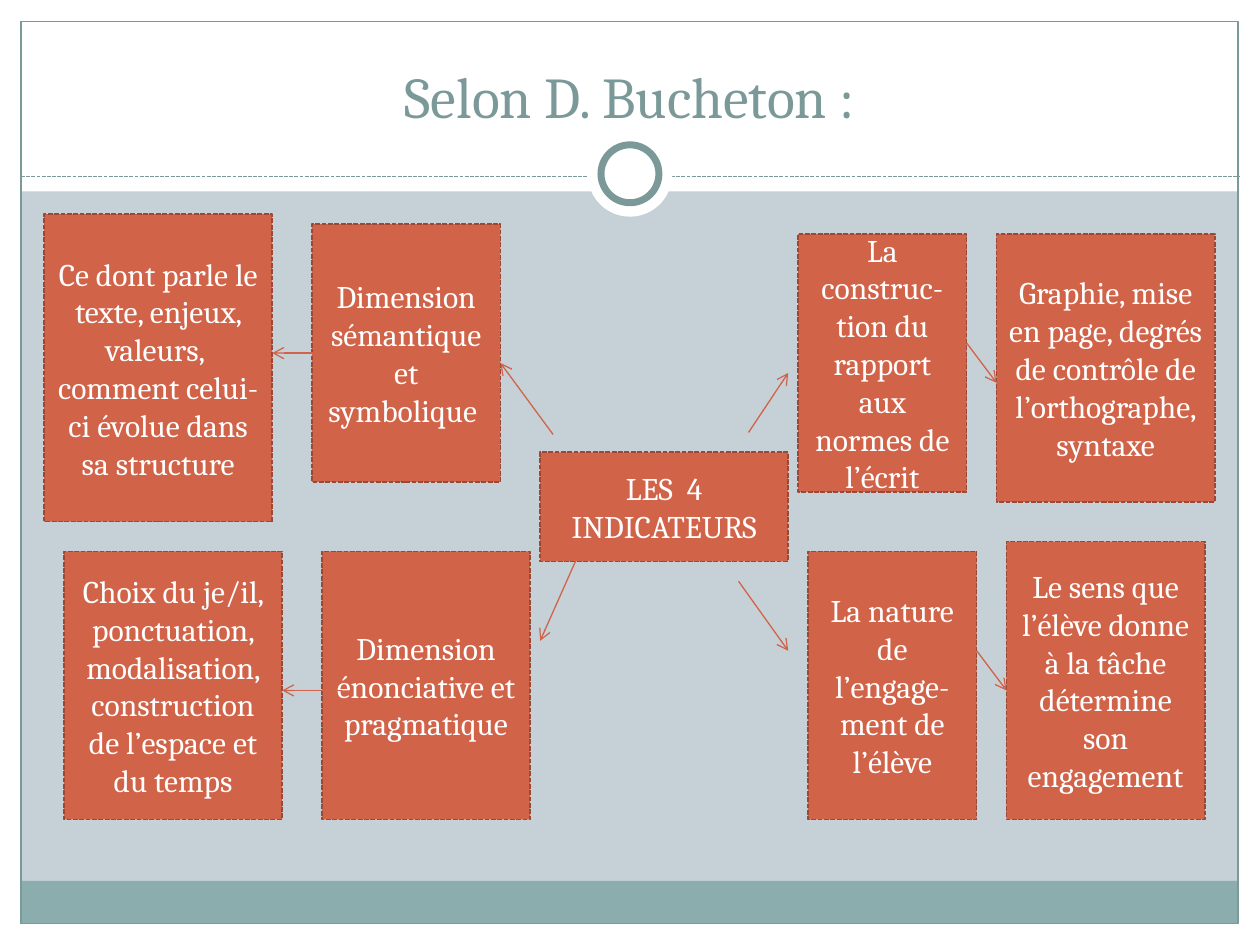
"""Build a slide on the four indicators of writing, with their arrows and details."""

import dataclasses
import typing

import lxml.etree
import pptx
import pptx.dml.color
import pptx.enum.dml
import pptx.enum.shapes
import pptx.enum.text
import pptx.oxml.ns
import pptx.util

COLORS = {
    "background": "C5D1D7",
    "white": "FFFFFF",
    "footer": "8CADAE",
    "accent": "7C999A",
    "box": "D16349",
    "box_edge": "9B4936",
}
FONT = "Cambria"
SLIDE_WIDTH = pptx.util.Inches(10)
SLIDE_HEIGHT = pptx.util.Inches(7.5)
GRID_CELL = pptx.util.Cm(0.2)
GRID_LEFT = pptx.util.Inches(0.35)
GRID_TOP = pptx.util.Inches(1.7)
DASH = pptx.enum.dml.MSO_LINE.SQUARE_DOT
RECTANGLE = pptx.enum.shapes.MSO_SHAPE.RECTANGLE
OVAL = pptx.enum.shapes.MSO_SHAPE.OVAL


@dataclasses.dataclass(frozen=True)
class Decoration:
    """Theme shape placed in percent of the slide's size."""

    left: float
    top: float
    width: float
    height: float
    fill: str | None = "white"
    line_width: float = 0
    geometry: typing.Any = RECTANGLE


@dataclasses.dataclass(frozen=True)
class Box:
    """Text box placed in columns and rows of the grid."""

    column: int
    row: int
    columns: int
    rows: int
    paragraphs: tuple[str, ...]


@dataclasses.dataclass(frozen=True)
class Arrow:
    """Arrow between two (column, row) points of the grid."""

    start: tuple[float, float]
    end: tuple[float, float]


FRAME = (
    Decoration(0, 97.73, 100, 2.27),
    Decoration(0, 0, 100, 20.27),
    Decoration(0, 0, 1.67, 100),
    Decoration(98.33, 0, 1.67, 100),
    Decoration(1.6, 93.2, 96.6, 4.53, "footer"),
    Decoration(1.67, 2.27, 96.6, 95.47, None, 0.75),
)
RINGS = (
    Decoration(46.65, 14, 6.7, 8.93, geometry=OVAL),
    Decoration(47.7, 15.33, 4.6, 6.13, line_width=4, geometry=OVAL),
)
BOXES = (
    Box(0, 0, 23, 31, ("Ce dont parle le texte, enjeux, valeurs,  comment celui-ci évolue dans sa structure",)),
    Box(27, 1, 19, 26, ("Dimension sémantique et symbolique ",)),
    Box(2, 34, 22, 27, ("Choix du je/il, ponctuation, modalisation, construction de l’espace et du temps",)),
    Box(28, 34, 21, 27, ("Dimension énonciative et pragmatique",)),
    Box(50, 24, 25, 11, ("LES  4 INDICATEURS",)),
    Box(76, 2, 17, 26, ("La construc-tion du rapport aux normes de l’écrit",)),
    Box(96, 2, 22, 27, ("Graphie, mise en page, degrés de contrôle de l’orthographe, syntaxe",)),
    Box(77, 34, 17, 27, ("La nature de l’engage-", "ment de l’élève")),
    Box(97, 33, 20, 28, ("Le sens que l’élève donne à la tâche détermine son engagement",)),
)
ARROWS = (
    Arrow((29, 14), (23, 14)),
    Arrow((93, 13), (96, 17)),
    Arrow((71, 22), (75, 16)),
    Arrow((70, 37), (75, 44)),
    Arrow((51.3, 22.2), (46, 15)),
    Arrow((30, 48), (24, 48)),
    Arrow((94, 44), (97, 48)),
    Arrow((54, 34), (50, 43)),
)


def color(name: str) -> pptx.dml.color.RGBColor:
    return pptx.dml.color.RGBColor.from_string(COLORS[name])


def across(percent: float) -> int:
    return round(SLIDE_WIDTH * percent / 100)


def down(percent: float) -> int:
    return round(SLIDE_HEIGHT * percent / 100)


def grid_point(column: float, row: float) -> tuple[int, int]:
    return round(GRID_LEFT + column * GRID_CELL), round(GRID_TOP + row * GRID_CELL)


def set_line(line: typing.Any, name: str, width: float) -> None:
    line.color.rgb = color(name)
    line.width = pptx.util.Pt(width)


def write_text(frame: typing.Any, lines: tuple[str, ...], size: int, name: str, anchor: typing.Any) -> None:
    frame.word_wrap = True
    frame.vertical_anchor = anchor
    frame.text = "\n".join(lines)
    for paragraph in frame.paragraphs:
        paragraph.alignment = pptx.enum.text.PP_ALIGN.CENTER
        paragraph.font.name = FONT
        paragraph.font.size = pptx.util.Pt(size)
        paragraph.font.color.rgb = color(name)


def draw_decoration(slide: typing.Any, item: Decoration) -> None:
    shape = slide.shapes.add_shape(
        item.geometry, across(item.left), down(item.top), across(item.width), down(item.height)
    )
    shape.shadow.inherit = False
    if item.fill:
        shape.fill.solid()
        shape.fill.fore_color.rgb = color(item.fill)
    else:
        shape.fill.background()
    if item.line_width:
        set_line(shape.line, "accent", item.line_width)
    else:
        shape.line.fill.background()


def draw_box(slide: typing.Any, box: Box) -> None:
    shape = slide.shapes.add_shape(
        RECTANGLE, *grid_point(box.column, box.row), box.columns * GRID_CELL, box.rows * GRID_CELL
    )
    shape.shadow.inherit = False
    shape.fill.solid()
    shape.fill.fore_color.rgb = color("box")
    set_line(shape.line, "box_edge", 0.9)
    shape.line.dash_style = DASH
    write_text(shape.text_frame, box.paragraphs, 18, "white", pptx.enum.text.MSO_ANCHOR.MIDDLE)


def draw_line(slide: typing.Any, start: tuple[int, int], end: tuple[int, int], name: str) -> typing.Any:
    connector = slide.shapes.add_connector(pptx.enum.shapes.MSO_CONNECTOR.STRAIGHT, *start, *end)
    set_line(connector.line, name, 0.75)
    lxml.etree.SubElement(connector._element.spPr, pptx.oxml.ns.qn("a:effectLst"))
    return connector


def draw_arrow(slide: typing.Any, arrow: Arrow) -> None:
    connector = draw_line(slide, grid_point(*arrow.start), grid_point(*arrow.end), "box")
    outline = connector._element.spPr.find(pptx.oxml.ns.qn("a:ln"))
    lxml.etree.SubElement(outline, pptx.oxml.ns.qn("a:tailEnd"), type="arrow")


def main() -> None:
    presentation = pptx.Presentation()
    presentation.slide_width, presentation.slide_height = SLIDE_WIDTH, SLIDE_HEIGHT
    slide = presentation.slides.add_slide(presentation.slide_layouts[6])
    slide.background.fill.solid()
    slide.background.fill.fore_color.rgb = color("background")
    for item in FRAME:
        draw_decoration(slide, item)
    divider = draw_line(slide, (across(1.67), down(18.67)), (across(98.33), down(18.67)), "accent")
    divider.line.dash_style = DASH
    for item in RINGS:
        draw_decoration(slide, item)
    title = slide.shapes.add_textbox(across(3.33), down(3.33), across(93.33), down(11.07))
    write_text(title.text_frame, ("Selon D. Bucheton :",), 33, "accent", pptx.enum.text.MSO_ANCHOR.BOTTOM)
    for box in BOXES:
        draw_box(slide, box)
    for arrow in ARROWS:
        draw_arrow(slide, arrow)
    presentation.save("out.pptx")


if __name__ == "__main__":
    main()
